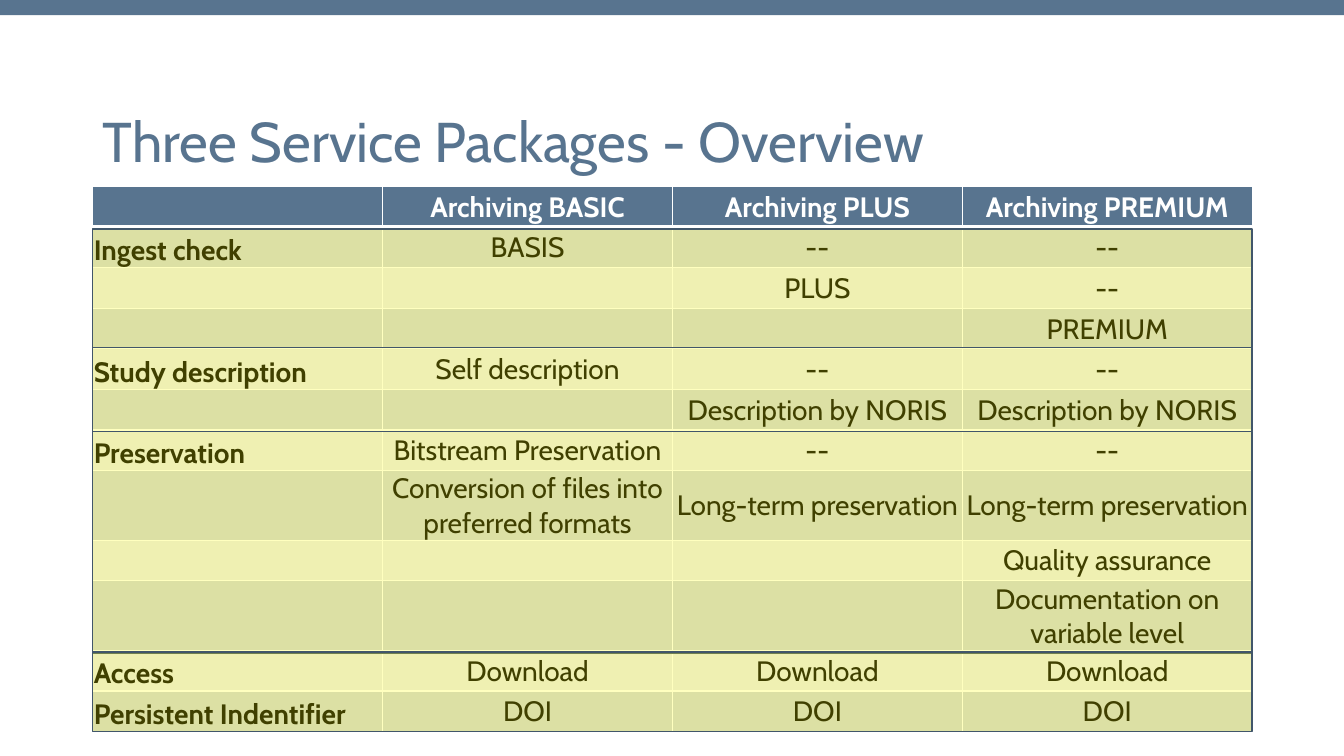
from lxml import etree
from pptx import Presentation, util as u
from pptx.dml import color
from pptx.enum import shapes, text
from pptx.oxml import ns

FONT = "Cabin"
BLUE, NAVY, WHITE, BLACK, YELLOW = "58748F", "41566A", "FFFFFF", "000000", "FFFF00"
BANDS = ("EAEBEE", "D1D6DB")
LEFT, TOP, WIDTH, HEIGHT = 0.92, 1.85, 11.5, 5.41
TALL_HEIGHT = 0.69
TALL_ROWS = (7, 9)
SECTIONS = ((2.27, 1.18), (3.45, 0.83), (4.28, 2.2), (6.47, 0.79))
ROWS = (
    ("", "Archiving BASIC", "Archiving PLUS", "Archiving PREMIUM"),
    ("Ingest check", "BASIS", "--", "--"),
    ("", "", "PLUS", "--"),
    ("", "", "", "PREMIUM"),
    ("Study description", "Self description", "--", "--"),
    ("", "", "Description by NORIS", "Description by NORIS"),
    ("Preservation", "Bitstream Preservation", "--", "--"),
    ("", "Conversion of files into preferred formats",
     "Long-term preservation", "Long-term preservation"),
    ("", "", "", "Quality assurance"),
    ("", "", "", "Documentation on\nvariable level"),
    ("Access", "Download", "Download", "Download"),
    ("Persistent Indentifier", "DOI", "DOI", "DOI"),
)


def rgb(value):
    return color.RGBColor.from_string(value)


def write(frame, words, size=20, colour=BLACK, bold=False,
          align=text.PP_ALIGN.LEFT, spacing=None):
    frame.text = words
    for para in frame.paragraphs:
        para.alignment = align
        if spacing:
            para.line_spacing = spacing
        para.font.size = u.Pt(size)
        for span in para.runs:
            span.font.name = FONT
            span.font.size = u.Pt(size)
            span.font.bold = bold
            span.font.color.rgb = rgb(colour)


def border(cell, bottom):
    props = cell._tc.get_or_add_tcPr()
    for index, side in enumerate(("lnL", "lnR", "lnT", "lnB")):
        width = bottom if side == "lnB" else 1
        line = etree.Element(ns.qn(f"a:{side}"), w=str(u.Pt(width)))
        fill = etree.SubElement(line, ns.qn("a:solidFill"))
        etree.SubElement(fill, ns.qn("a:srgbClr"), val=WHITE)
        props.insert(index, line)


class PackageSlide:
    def __init__(self, deck):
        self.page = deck.slides.add_slide(deck.slide_layouts[5])

    def title(self, words):
        box = self.page.shapes.title
        box.left, box.top = u.Inches(LEFT), u.Inches(1.02)
        box.width, box.height = u.Inches(WIDTH), u.Inches(0.83)
        box.text_frame.vertical_anchor = text.MSO_ANCHOR.MIDDLE
        write(box.text_frame, words, size=40, colour=BLUE, spacing=0.9)

    def rectangle(self, left, top, width, height, fill, line=None, opacity=100):
        box = self.page.shapes.add_shape(
            shapes.MSO_SHAPE.RECTANGLE, u.Inches(left), u.Inches(top),
            u.Inches(width), u.Inches(height))
        box.shadow.inherit = False
        box.fill.solid()
        box.fill.fore_color.rgb = rgb(fill)
        if opacity < 100:
            shade = box._element.spPr.find(".//" + ns.qn("a:srgbClr"))
            etree.SubElement(shade, ns.qn("a:alpha"), val=str(opacity * 1000))
        if line:
            box.line.color.rgb = rgb(line)
            box.line.width = u.Pt(1)
        else:
            box.line.fill.background()

    def table(self, rows):
        table = self.page.shapes.add_table(
            len(rows), len(rows[0]), u.Inches(LEFT), u.Inches(TOP),
            u.Inches(WIDTH), u.Inches(HEIGHT)).table
        plain_height = ((HEIGHT - TALL_HEIGHT * len(TALL_ROWS))
                        / (len(rows) - len(TALL_ROWS)))
        for r, row in enumerate(rows):
            tall = r in TALL_ROWS
            table.rows[r].height = u.Inches(TALL_HEIGHT if tall else plain_height)
            for c, words in enumerate(row):
                self.cell(table.cell(r, c), words, r, c)

    def cell(self, cell, words, r, c):
        header, label = r == 0, c == 0
        cell.margin_left = cell.margin_right = cell.margin_top = u.Inches(0.01)
        cell.margin_bottom = 0
        cell.vertical_anchor = (text.MSO_ANCHOR.BOTTOM if label
                                else text.MSO_ANCHOR.MIDDLE)
        cell.fill.solid()
        cell.fill.fore_color.rgb = rgb(BLUE if header else BANDS[r % 2])
        border(cell, bottom=3 if header else 1)
        write(cell.text_frame, words, colour=WHITE if header else BLACK,
              bold=header or label,
              align=text.PP_ALIGN.LEFT if label else text.PP_ALIGN.CENTER)


def main():
    deck = Presentation()
    deck.slide_width, deck.slide_height = u.Inches(13.33), u.Inches(7.5)
    slide = PackageSlide(deck)
    slide.rectangle(0, 0, 13.33, 0.15, BLUE)
    slide.title("Three Service Packages - Overview")
    slide.table(ROWS)
    for top, height in SECTIONS:
        slide.rectangle(LEFT, top, WIDTH, height, YELLOW, line=NAVY, opacity=25)
    deck.save("out.pptx")


if __name__ == "__main__":
    main()
